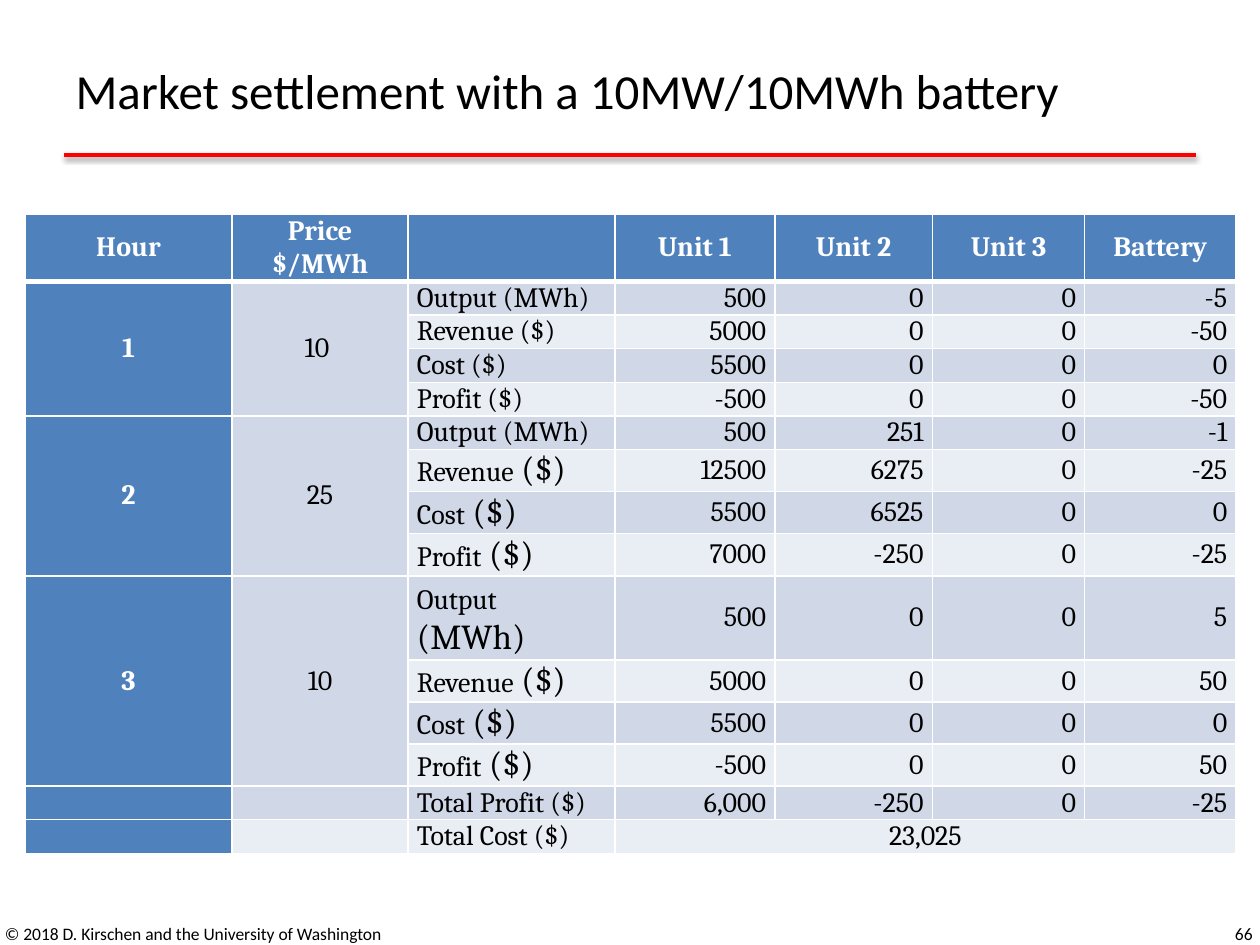
import pptx
import pptx.util
import pptx.dml.color
import pptx.enum.shapes
import pptx.enum.text
import pptx.oxml.ns
from lxml import etree

Inches, Pt = pptx.util.Inches, pptx.util.Pt
qn = pptx.oxml.ns.qn
ALIGN = pptx.enum.text.PP_ALIGN
MIDDLE = pptx.enum.text.MSO_ANCHOR.MIDDLE

COLORS = {"text": "000000", "white": "FFFFFF", "rule": "FF0000",
          "header": "4F81BD", "odd": "D0D8E8", "even": "E9EDF4"}

HEADERS = ["Hour", "Price $/MWh", "", "Unit 1", "Unit 2", "Unit 3", "Battery"]
LABELS = ["Output (MWh)", "Revenue ($)", "Cost ($)", "Profit ($)"]
HOURS = [
    ("1", "10 ", [[500, 0, 0, -5], [5000, 0, 0, -50],
                  [5500, 0, 0, 0], [-500, 0, 0, -50]]),
    ("2", "25", [[500, 251, 0, -1], [12500, 6275, 0, -25],
                 [5500, 6525, 0, 0], [7000, -250, 0, -25]]),
    ("3", "10", [[500, 0, 0, 5], [5000, 0, 0, 50],
                 [5500, 0, 0, 0], [-500, 0, 0, 50]]),
]
TOTALS = [["", "", "Total Profit ($)", "6,000", "-250", "0", "-25"],
          ["", "", "Total Cost ($)", "23,025", "", "", ""]]
COLUMN_WIDTHS = [1.64, 1.4, 1.64, 1.27, 1.25, 1.21, 1.2]
LARGE_UNIT_ROWS = range(6, 13)  # rows whose unit is set in larger type
WRAPPED_ROW = 9


class SlideBuilder:
    """Holds the style and the current slide."""

    def __init__(self, slide):
        self.slide = slide
        self.body_font = "Calibri"
        self.table_font = "Cambria"

    def color(self, name):
        return pptx.dml.color.RGBColor.from_string(COLORS[name])

    def format_run(self, run, font, size, color="text", bold=False):
        run.font.name = font
        run.font.size = Pt(size)
        run.font.bold = bold
        run.font.color.rgb = self.color(color)

    def fill_text(self, shape, text, size, align):
        frame = shape.text_frame
        frame.text = text
        frame.word_wrap = True
        frame.vertical_anchor = MIDDLE
        paragraph = frame.paragraphs[0]
        paragraph.alignment = align
        self.format_run(paragraph.runs[0], self.body_font, size)

    def title(self, text, left, top, width, height):
        shape = self.slide.shapes.title
        shape.left, shape.top = Inches(left), Inches(top)
        shape.width, shape.height = Inches(width), Inches(height)
        self.fill_text(shape, text, 28, ALIGN.LEFT)

    def text_box(self, text, left, top, width, height, align):
        shape = self.slide.shapes.add_textbox(
            Inches(left), Inches(top), Inches(width), Inches(height))
        self.fill_text(shape, text, 10, align)

    def rule(self, left, right, y):
        line = self.slide.shapes.add_connector(
            pptx.enum.shapes.MSO_CONNECTOR.STRAIGHT,
            Inches(left), Inches(y), Inches(right), Inches(y))
        line.line.color.rgb = self.color("rule")
        line.line.width = Pt(2)
        effects = etree.SubElement(line._element.spPr, qn("a:effectLst"))
        shadow = etree.SubElement(
            effects, qn("a:outerShdw"), blurRad=str(Pt(3.1)),
            dist=str(Pt(1.6)), dir="5400000", rotWithShape="0")
        shade = etree.SubElement(shadow, qn("a:srgbClr"), val=COLORS["text"])
        etree.SubElement(shade, qn("a:alpha"), val="38000")

    def cell_borders(self, cell, top=1, bottom=1):
        properties = cell._tc.get_or_add_tcPr()
        for side, width in (("L", 1), ("R", 1), ("T", top), ("B", bottom)):
            border = etree.SubElement(
                properties, qn("a:ln" + side), w=str(Pt(width)))
            fill = etree.SubElement(border, qn("a:solidFill"))
            etree.SubElement(fill, qn("a:srgbClr"), val=COLORS["white"])

    def cell(self, cell, text, row, column):
        is_header = row == 0 or column == 0
        self.cell_borders(cell, top=3 if row == 1 else 1,
                          bottom=3 if row == 0 else 1)
        band = "odd" if row % 2 else "even"
        cell.fill.solid()
        cell.fill.fore_color.rgb = self.color("header" if is_header else band)
        cell.margin_left = cell.margin_right = Inches(0.07)
        cell.margin_top = cell.margin_bottom = 0
        cell.vertical_anchor = MIDDLE

        paragraph = cell.text_frame.paragraphs[0]
        centred = is_header or column == 1 or text == "23,025"
        paragraph.alignment = (ALIGN.CENTER if centred else
                               ALIGN.LEFT if column == 2 else ALIGN.RIGHT)
        parts = [(text, 16)] if text else []
        if column == 2 and row in LARGE_UNIT_ROWS:
            name, unit = text.split(" ")
            parts = [(name, 16), (" " + unit, 20)]
        for part, size in parts:
            run = paragraph.add_run()
            run.text = part
            self.format_run(run, self.table_font, size,
                            "white" if is_header else "text", is_header)
        if not parts:  # keeps an empty cell from stretching its row
            etree.SubElement(paragraph._p, qn("a:endParaRPr"), sz="1600")

    def table(self, rows, heights, left, top):
        table = self.slide.shapes.add_table(
            len(rows), len(COLUMN_WIDTHS), Inches(left), Inches(top),
            Inches(sum(COLUMN_WIDTHS)), Inches(sum(heights))).table
        for column, width in zip(table.columns, COLUMN_WIDTHS):
            column.width = Inches(width)
        for row, height in zip(table.rows, heights):
            row.height = Inches(height)
        for row, values in enumerate(rows):
            for column, text in enumerate(values):
                self.cell(table.cell(row, column), text, row, column)
        return table


def settlement_rows():
    rows = [HEADERS]
    for hour, price, results in HOURS:
        for index, (label, values) in enumerate(zip(LABELS, results)):
            lead = [hour, price] if index == 0 else ["", ""]
            rows.append(lead + [label] + [str(value) for value in values])
    return rows + TOTALS


def row_height(row):
    if row == 0:
        return 0.51
    if row == WRAPPED_ROW:
        return 0.64
    return 0.32 if row in LARGE_UNIT_ROWS else 0.25


def main():
    presentation = pptx.Presentation()
    presentation.slide_width, presentation.slide_height = Inches(10), Inches(7.5)
    slide = presentation.slides.add_slide(presentation.slide_layouts[5])
    builder = SlideBuilder(slide)

    # Heading
    builder.rule(0.51, 9.49, 1.23)
    builder.title("Market settlement with a 10MW/10MWh battery", 0.5, 0.13, 9, 1.17)

    # Footer
    builder.text_box("© 2018 D. Kirschen and the University of Washington",
                     -0.06, 7.21, 3.88, 0.4, ALIGN.LEFT)
    builder.text_box("66", 7.71, 7.21, 2.33, 0.4, ALIGN.RIGHT)

    # Settlement table, with hour and price spanning each hour's four rows
    rows = settlement_rows()
    heights = [row_height(row) for row in range(len(rows))]
    table = builder.table(rows, heights, 0.2, 1.7)
    for first in range(1, 13, len(LABELS)):
        for column in (0, 1):
            last = first + len(LABELS) - 1
            table.cell(first, column).merge(table.cell(last, column))
    table.cell(14, 3).merge(table.cell(14, 6))

    presentation.save("out.pptx")


if __name__ == "__main__":
    main()
